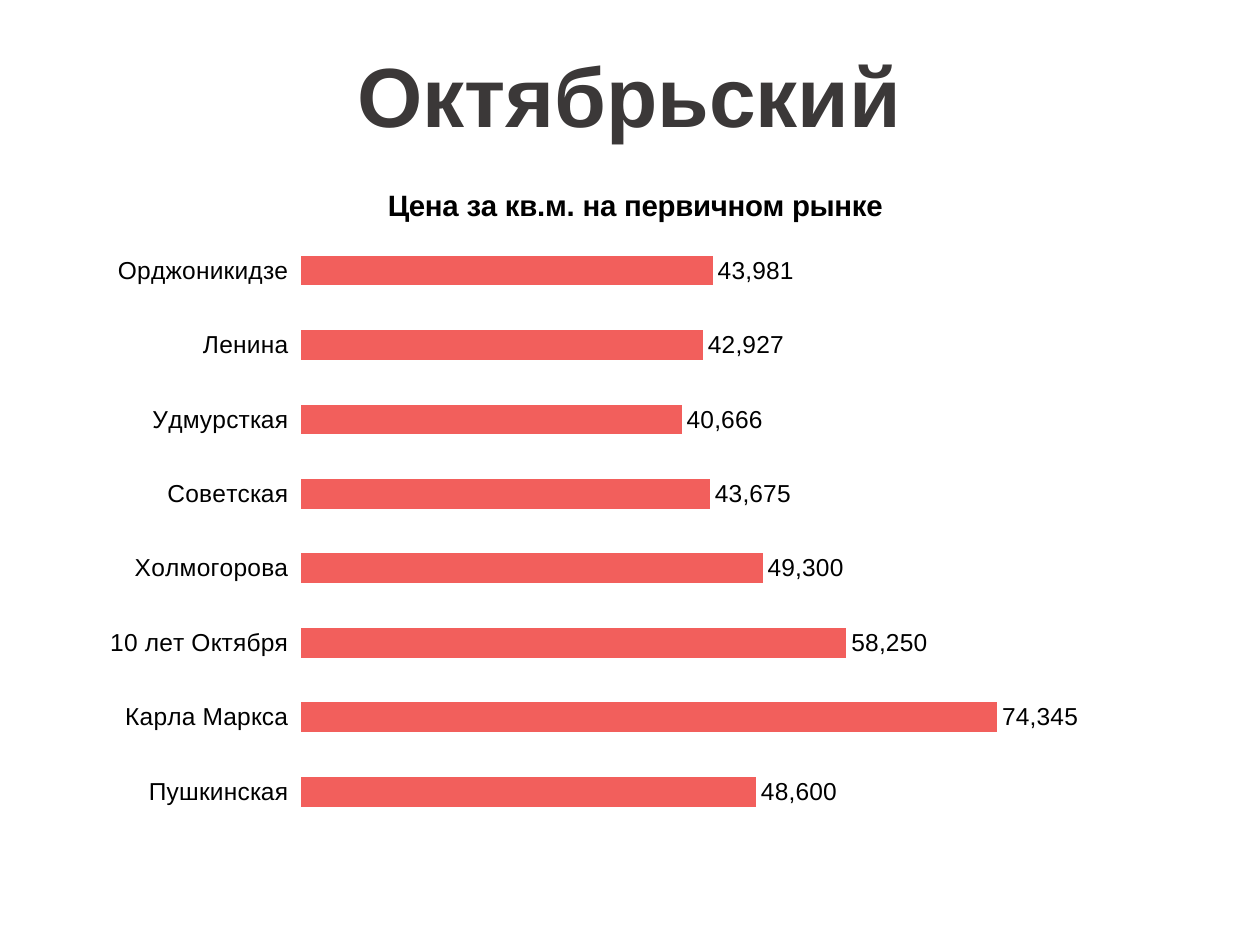
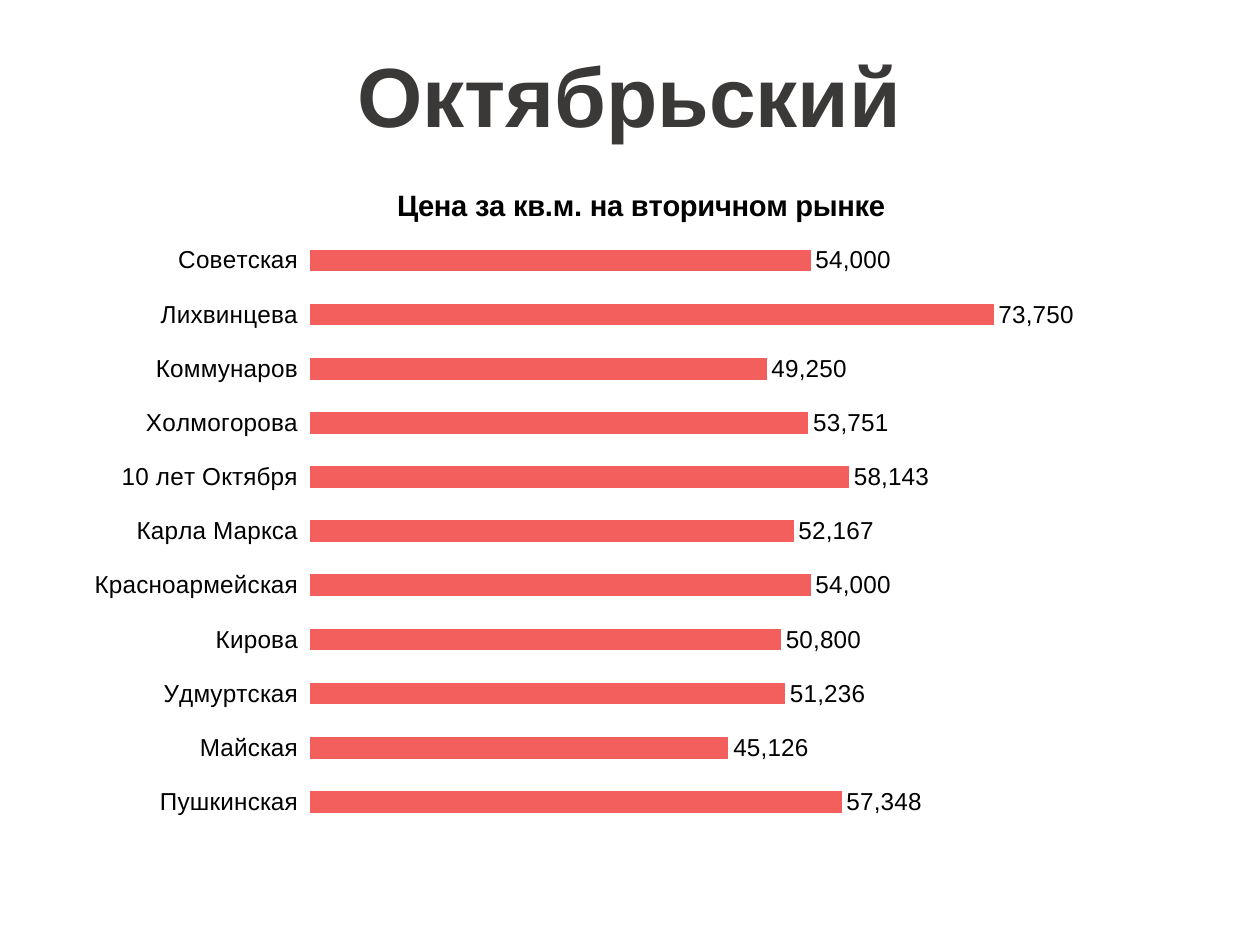
from pptx import Presentation
from pptx.chart.data import CategoryChartData
from pptx.dml.color import RGBColor
from pptx.enum.chart import XL_CHART_TYPE, XL_LABEL_POSITION, XL_TICK_MARK
from pptx.enum.text import MSO_ANCHOR, MSO_AUTO_SIZE, PP_ALIGN
from pptx.oxml import parse_xml
from pptx.oxml.ns import nsdecls
from pptx.util import Pt

PX = 9144  # 100 px to the inch
FONT = "Arial"
HEADING = RGBColor(0x3B, 0x38, 0x38)
BLACK = RGBColor(0x00, 0x00, 0x00)
CORAL = RGBColor(0xF2, 0x5F, 0x5C)

DISTRICT = "Октябрьский"
PRICE_FORMAT = "#,##0"
TITLE_BOX = [n * PX for n in (98, 29, 803, 91)]
CHART_BOX = [n * PX for n in (75, 127, 858, 571)]
PLOT_AREA = {"x": 0.191, "y": 0.102, "w": 0.693, "h": 0.828}

# Streets run from the bottom bar to the top one
MARKETS = [
    ("Цена за кв.м. на первичном рынке", "Цена за кв.м. на первичном рынке", {
        "Пушкинская": 48600,
        "Карла Маркса": 74345,
        "10 лет Октября": 58250,
        "Холмогорова": 49300,
        "Советская": 43675,
        "Удмурсткая": 40666,
        "Ленина": 42927,
        "Орджоникидзе": 43981,
    }),
    ("Цена за кв.м. на вторичном рынке", "Series 1", {
        "Пушкинская": 57348,
        "Майская": 45126,
        "Удмуртская": 51236,
        "Кирова": 50800,
        "Красноармейская": 54000,
        "Карла Маркса": 52167,
        "10 лет Октября": 58143,
        "Холмогорова": 53751,
        "Коммунаров": 49250,
        "Лихвинцева": 73750,
        "Советская": 54000,
    }),
]


def style_font(font, size, color, bold=False):
    font.name = FONT
    font.size = Pt(size)
    font.bold = bold
    font.color.rgb = color


def fix_plot_area(chart):
    """Pin the inner plot area to fixed fractions of the chart."""
    places = "".join(f'<c:{side}Mode val="edge"/>' for side in "xy")
    places += "".join(f'<c:{key} val="{part}"/>' for key, part in PLOT_AREA.items())
    layout = parse_xml(
        f'<c:layout {nsdecls("c")}><c:manualLayout>'
        f'<c:layoutTarget val="inner"/>{places}</c:manualLayout></c:layout>')
    plot_area = chart.element.chart.plotArea
    for automatic in plot_area.findall(layout.tag):
        plot_area.remove(automatic)
    plot_area.insert(0, layout)


prs = Presentation()
prs.slide_width, prs.slide_height = 1000 * PX, 750 * PX

for market, series_name, prices in MARKETS:
    slide = prs.slides.add_slide(prs.slide_layouts[5])

    # District heading
    heading = slide.shapes.title
    heading.left, heading.top, heading.width, heading.height = TITLE_BOX
    frame = heading.text_frame
    frame.word_wrap = True
    frame.auto_size = MSO_AUTO_SIZE.SHAPE_TO_FIT_TEXT
    frame.vertical_anchor = MSO_ANCHOR.MIDDLE
    frame.paragraphs[0].alignment = PP_ALIGN.CENTER
    district = frame.paragraphs[0].add_run()
    district.text = DISTRICT
    style_font(district.font, 48, HEADING, bold=True)

    # Price chart
    price_data = CategoryChartData(number_format=PRICE_FORMAT)
    price_data.categories = list(prices)
    price_data.add_series(series_name, list(prices.values()))
    chart = slide.shapes.add_chart(
        XL_CHART_TYPE.BAR_CLUSTERED, *CHART_BOX, price_data).chart
    style_font(chart.font, 14, BLACK)
    chart.has_legend = False
    fix_plot_area(chart)

    # Chart title
    chart.has_title = True
    chart.chart_title.include_in_layout = False
    caption = chart.chart_title.text_frame.paragraphs[0].add_run()
    caption.text = market
    style_font(caption.font, 16.8, BLACK, bold=True)

    # Axes
    streets = chart.category_axis
    streets.has_major_gridlines = False
    streets.major_tick_mark = XL_TICK_MARK.OUTSIDE
    streets.format.line.fill.background()
    price_axis = chart.value_axis
    price_axis.has_major_gridlines = False
    price_axis.minimum_scale, price_axis.maximum_scale = 0, 80000
    price_axis.tick_labels.number_format = PRICE_FORMAT
    price_axis.tick_labels.number_format_is_linked = False
    price_axis.visible = False

    # Bars and their values
    bars = chart.plots[0]
    bars.gap_width = 150
    bars.vary_by_categories = False
    bar_fill = bars.series[0].format.fill
    bar_fill.solid()
    bar_fill.fore_color.rgb = CORAL
    values = bars.series[0].data_labels
    values.show_value = True
    values.number_format = PRICE_FORMAT
    values.number_format_is_linked = False
    values.position = XL_LABEL_POSITION.OUTSIDE_END
    style_font(values.font, 14, BLACK)

prs.save("out.pptx")
